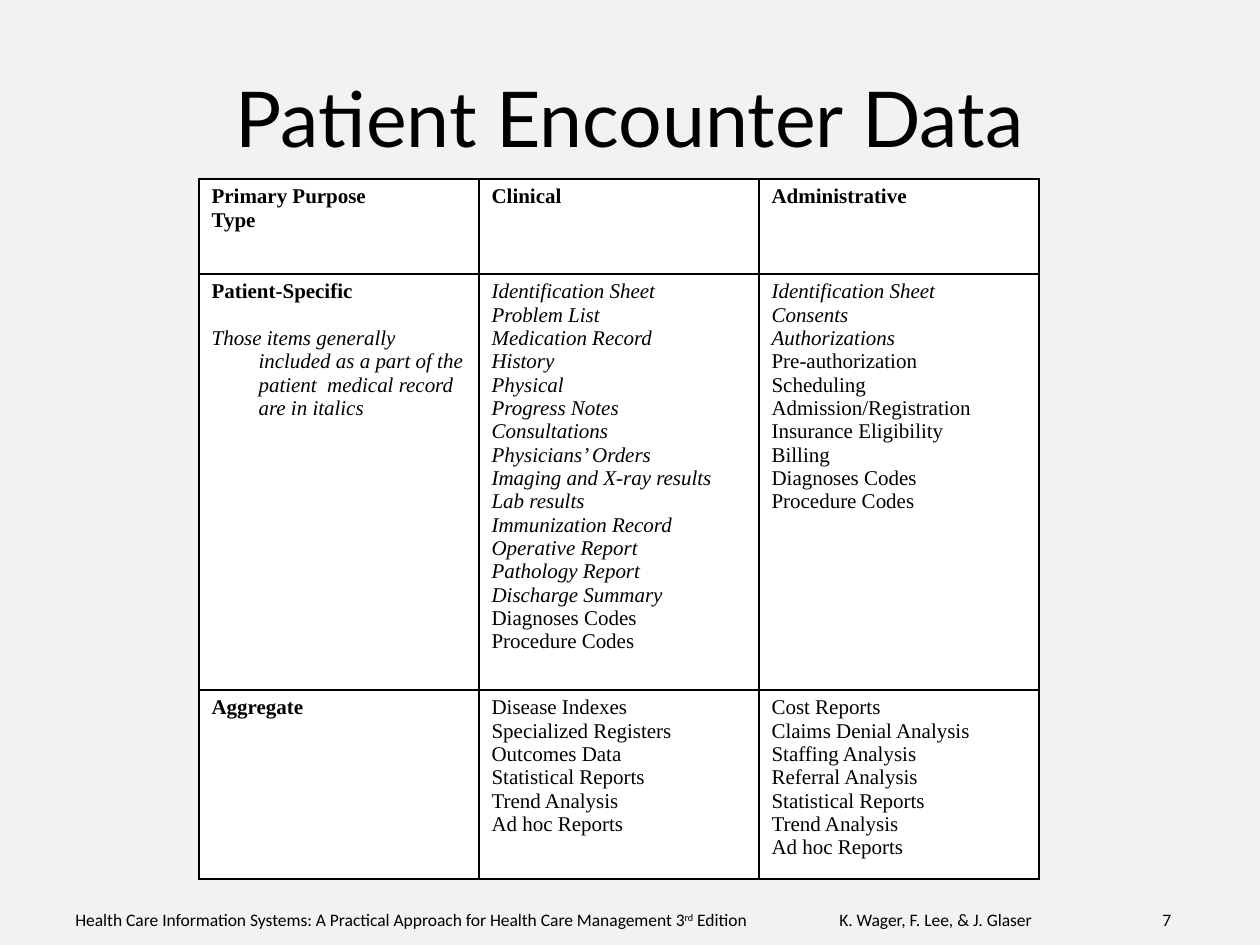
from lxml.etree import SubElement
from pptx import Presentation
from pptx.dml.color import RGBColor
from pptx.enum.text import MSO_ANCHOR, PP_ALIGN
from pptx.oxml.ns import qn
from pptx.util import Pt

EMU_PER_PX = 914400 / 126
BACKGROUND = RGBColor(0xF2, 0xF2, 0xF2)
WHITE = RGBColor(0xFF, 0xFF, 0xFF)
BLACK = RGBColor(0x00, 0x00, 0x00)

BOLD = {"bold": True}
ITALIC = {"italic": True}
PLAIN = {}

ROW_HEIGHTS = [95, 386, 176]
COLUMN_WIDTHS = [280, 280, 280]
TABLE_ROWS = [
    [
        [(BOLD, ["Primary Purpose", "Type"])],
        [(BOLD, ["Clinical"])],
        [(BOLD, ["Administrative"])],
    ],
    [
        [
            ({"bold": True, "space_after": 13.3}, ["Patient-Specific"]),
            (ITALIC, ["Those items generally included as a part of the "
                      "patient  medical record are in italics"]),
        ],
        [
            (ITALIC, ["Identification Sheet", "Problem List", "Medication Record",
                      "History", "Physical", "Progress Notes", "Consultations",
                      "Physicians’ Orders", "Imaging and X-ray results",
                      "Lab results", "Immunization Record", "Operative Report",
                      "Pathology Report", "Discharge Summary"]),
            (PLAIN, ["Diagnoses Codes", "Procedure Codes"]),
        ],
        [
            (ITALIC, ["Identification Sheet", "Consents", "Authorizations"]),
            (PLAIN, ["Pre-authorization", "Scheduling", "Admission/Registration",
                     "Insurance Eligibility", "Billing", "Diagnoses Codes",
                     "Procedure Codes"]),
        ],
    ],
    [
        [(BOLD, ["Aggregate"])],
        [(PLAIN, ["Disease Indexes", "Specialized Registers", "Outcomes Data",
                  "Statistical Reports", "Trend Analysis", "Ad hoc Reports"])],
        [(PLAIN, ["Cost Reports", "Claims Denial Analysis", "Staffing Analysis",
                  "Referral Analysis", "Statistical Reports", "Trend Analysis",
                  "Ad hoc Reports"])],
    ],
]


def px(length):
    return round(length * EMU_PER_PX)


def write(paragraph, text, font, size, bold=False, italic=False, baseline=0,
          align=PP_ALIGN.LEFT, space_after=0):
    paragraph.alignment = align
    paragraph.space_after = Pt(space_after)
    run = paragraph.add_run()
    run.text = text
    run.font.name = font
    run.font.size = Pt(size)
    run.font.bold = bold
    run.font.italic = italic
    run.font.color.rgb = BLACK
    if baseline:
        run.font._element.set("baseline", str(baseline * 1000))


class SlideBuilder:
    title_font = "Lato"
    table_font = "Times New Roman"
    footer_font = "Calibri"
    hanging_indent = 47

    def __init__(self, slide):
        self.slide = slide
        fill = slide.background.fill
        fill.solid()
        fill.fore_color.rgb = BACKGROUND

    def text_box(self, left, top, width, height, anchor=MSO_ANCHOR.TOP):
        shape = self.slide.shapes.add_textbox(px(left), px(top), px(width), px(height))
        shape.text_frame.word_wrap = True
        shape.text_frame.vertical_anchor = anchor
        return shape.text_frame.paragraphs[0]

    def title(self, text):
        paragraph = self.text_box(63, 38, 1134, 157, MSO_ANCHOR.MIDDLE)
        write(paragraph, text, self.title_font, 44, align=PP_ALIGN.CENTER)

    def footer(self, parts, tab_stops):
        paragraph = self.text_box(63, 903, 1144, 39)
        tabs = SubElement(paragraph._p.get_or_add_pPr(), qn("a:tabLst"))
        for position in tab_stops:
            SubElement(tabs, qn("a:tab"), pos=str(px(position)), algn="l")
        for text, baseline in parts:
            write(paragraph, text, self.footer_font, 10, baseline=baseline)

    def table(self, left, top, rows):
        shape = self.slide.shapes.add_table(
            len(ROW_HEIGHTS), len(COLUMN_WIDTHS), px(left), px(top),
            px(sum(COLUMN_WIDTHS)), px(sum(ROW_HEIGHTS)))
        table = shape.table
        table.first_row = False
        table.horz_banding = False
        for column, width in zip(table.columns, COLUMN_WIDTHS):
            column.width = px(width)
        for row, height, contents in zip(table.rows, ROW_HEIGHTS, rows):
            row.height = px(height)
            for cell, groups in zip(row.cells, contents):
                self.fill_cell(cell, groups)

    def fill_cell(self, cell, groups):
        self.border(cell)
        cell.fill.solid()
        cell.fill.fore_color.rgb = WHITE
        lines = [(text, style) for style, texts in groups for text in texts]
        for index, (text, style) in enumerate(lines):
            frame = cell.text_frame
            paragraph = frame.add_paragraph() if index else frame.paragraphs[0]
            properties = paragraph._p.get_or_add_pPr()
            properties.set("marL", str(px(self.hanging_indent)))
            properties.set("indent", str(-px(self.hanging_indent)))
            write(paragraph, text, self.table_font, 12, **style)

    def border(self, cell):
        properties = cell._tc.get_or_add_tcPr()
        for side in ("a:lnL", "a:lnR", "a:lnT", "a:lnB"):
            line = SubElement(properties, qn(side), w=str(Pt(1)))
            fill = SubElement(line, qn("a:solidFill"))
            SubElement(fill, qn("a:srgbClr"), val=str(BLACK))


def main():
    presentation = Presentation()
    presentation.slide_width = px(1260)
    presentation.slide_height = px(945)
    builder = SlideBuilder(presentation.slides.add_slide(presentation.slide_layouts[6]))
    builder.footer(
        [("Health Care Information Systems: A Practical Approach for "
          "Health Care Management 3", 0),
         ("rd", 30),
         (" Edition\tK. Wager, F. Lee, & J. Glaser\t7", 0)],
        tab_stops=[764, 1087])
    builder.title("Patient Encounter Data")
    builder.table(199, 179, TABLE_ROWS)
    presentation.save("out.pptx")


if __name__ == "__main__":
    main()
